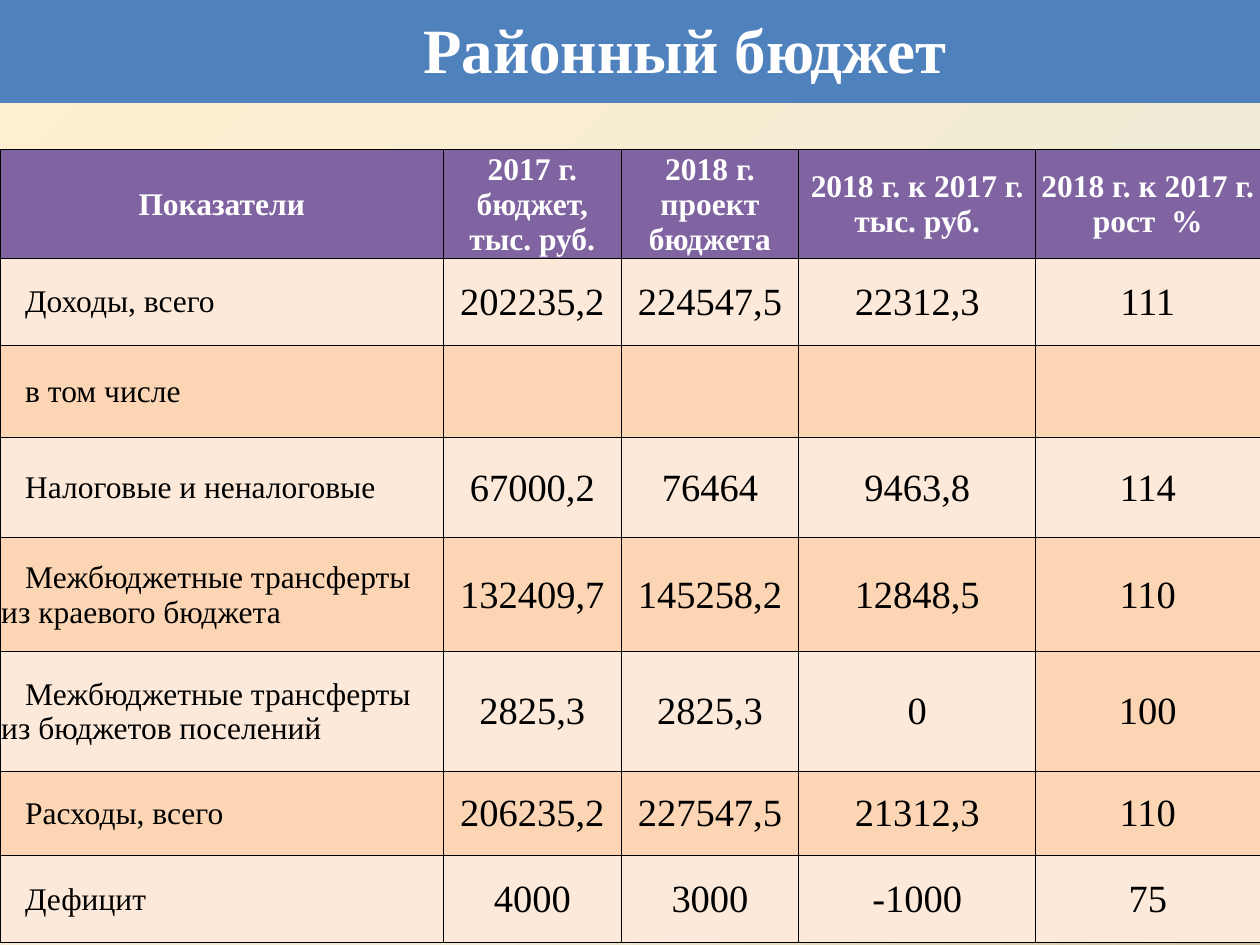
from copy import deepcopy
from dataclasses import dataclass

from pptx import Presentation
from pptx import util as u
from pptx.dml.color import RGBColor
from pptx.enum import text
from pptx.oxml import parse_xml
from pptx.oxml.ns import nsdecls, qn


@dataclass(frozen=True)
class Theme:
    font: str = "Times New Roman"
    title_size: int = 36
    label_size: int = 18
    value_size: int = 22
    white: str = "FFFFFF"
    black: str = "000000"
    title_fill: str = "4F81BD"
    header_fill: str = "8064A2"
    light: str = "FDE9D9"
    dark: str = "FCD5B4"
    border_width: float = 0.5
    backdrop: tuple = ((0, "FFEFD1"), (0.65, "F0EBD5"), (1, "D1C39F"))


@dataclass(frozen=True)
class Style:
    size: int
    color: str
    fill: str
    bold: bool = False
    centred: bool = True
    indent: float = 0


@dataclass(frozen=True)
class BudgetLine:
    label: str
    values: tuple = ("", "", "", "")


THEME = Theme()
SLIDE_WIDTH, SLIDE_HEIGHT = u.Inches(10), u.Inches(7.5)
COLUMN_SHARES = (0.352, 0.141, 0.141, 0.188, 0.178)
ROW_HUNDREDTHS = (82, 37, 86, 69, 73, 80, 90, 95, 67, 69)
ROW_UNITS = 750
INSET = u.Inches(0.01)
NO_STYLE = "{2D5ABB26-0587-4C30-8999-92F81FD0307C}"

TITLE = "Районный бюджет"
HEADINGS = (
    "Показатели",
    "2017 г. бюджет, тыс. руб.",
    "2018 г. проект бюджета",
    "2018 г. к 2017 г. тыс. руб.",
    "2018 г. к 2017 г. рост  %",
)
BUDGET = (
    BudgetLine("Доходы, всего", ("202235,2", "224547,5", "22312,3", "111")),
    BudgetLine("в том числе"),
    BudgetLine("Налоговые и неналоговые", ("67000,2", "76464", "9463,8", "114")),
    BudgetLine("Межбюджетные трансферты из краевого бюджета",
               ("132409,7", "145258,2", "12848,5", "110")),
    BudgetLine("Межбюджетные трансферты из бюджетов поселений",
               ("2825,3", "2825,3", "0", "100")),
    BudgetLine("Расходы, всего", ("206235,2", "227547,5", "21312,3", "110")),
    BudgetLine("Дефицит", ("4000", "3000", "-1000", "75")),
)
HIGHLIGHT = (4, 3)


def paint_background(slide) -> None:
    fill = slide.background.fill
    fill.gradient()
    fill.gradient_angle = 315
    first = next(slide.element.iter(qn("a:gs")))
    first.addnext(deepcopy(first))
    for stop, (position, color) in zip(fill.gradient_stops, THEME.backdrop):
        stop.position = position
        stop.color.rgb = RGBColor.from_string(color)


def set_borders(cell, sides: str) -> None:
    properties = cell._tc.get_or_add_tcPr()
    for side in sides:
        properties.append(parse_xml(
            f'<a:ln{side} {nsdecls("a")} w="{u.Pt(THEME.border_width)}"><a:solidFill>'
            f'<a:srgbClr val="{THEME.black}"/></a:solidFill></a:ln{side}>'))


def set_insets(cell) -> None:
    cell.margin_left = cell.margin_right = cell.margin_top = INSET
    cell.margin_bottom = 0
    cell.vertical_anchor = text.MSO_ANCHOR.MIDDLE


def write_cell(cell, wording: str, style: Style) -> None:
    cell.fill.solid()
    cell.fill.fore_color.rgb = RGBColor.from_string(style.fill)
    if not wording:
        return
    paragraph = cell.text_frame.paragraphs[0]
    paragraph.alignment = text.PP_ALIGN.CENTER if style.centred else text.PP_ALIGN.LEFT
    if style.indent:
        properties = paragraph._p.get_or_add_pPr()
        properties.set("marL", "0")
        properties.set("indent", str(u.Inches(style.indent)))
    run = paragraph.add_run()
    run.text = wording
    run.font.name = THEME.font
    run.font.size = u.Pt(style.size)
    run.font.bold = style.bold
    run.font.color.rgb = RGBColor.from_string(style.color)


def add_grid(slide):
    frame = slide.shapes.add_table(
        len(ROW_HUNDREDTHS), len(COLUMN_SHARES), 0, 0, SLIDE_WIDTH, SLIDE_HEIGHT)
    table = frame.table
    table.first_row = table.horz_banding = False
    table._tbl.tblPr.find(qn("a:tableStyleId")).text = NO_STYLE
    for column, share in zip(table.columns, COLUMN_SHARES):
        column.width = round(SLIDE_WIDTH * share)
    for row, hundredths in zip(table.rows, ROW_HUNDREDTHS):
        row.height = round(SLIDE_HEIGHT * hundredths / ROW_UNITS)
    for index, row in enumerate(table.rows):
        for cell in row.cells:
            set_insets(cell)
            set_borders(cell, ("", "B")[index] if index < 2 else "LRTB")
    return table


def fill_table(table) -> None:
    title = table.cell(0, 0)
    title.merge(table.cell(0, len(COLUMN_SHARES) - 1))
    write_cell(title, TITLE, Style(THEME.title_size, THEME.white, THEME.title_fill, bold=True))
    title.margin_left = u.Inches(0.88)
    heading_style = Style(THEME.label_size, THEME.white, THEME.header_fill, bold=True)
    for column, heading in enumerate(HEADINGS):
        write_cell(table.cell(2, column), heading, heading_style)
    for line, budget in enumerate(BUDGET):
        band = THEME.dark if line % 2 else THEME.light
        label_style = Style(THEME.label_size, THEME.black, band, centred=False, indent=0.19)
        write_cell(table.cell(line + 3, 0), budget.label, label_style)
        for column, value in enumerate(budget.values):
            fill = THEME.dark if (line, column) == HIGHLIGHT else band
            write_cell(table.cell(line + 3, column + 1), value,
                       Style(THEME.value_size, THEME.black, fill))


def main() -> None:
    deck = Presentation()
    deck.slide_width, deck.slide_height = SLIDE_WIDTH, SLIDE_HEIGHT
    slide = deck.slides.add_slide(deck.slide_layouts[6])
    paint_background(slide)
    fill_table(add_grid(slide))
    deck.save("out.pptx")


if __name__ == "__main__":
    main()
